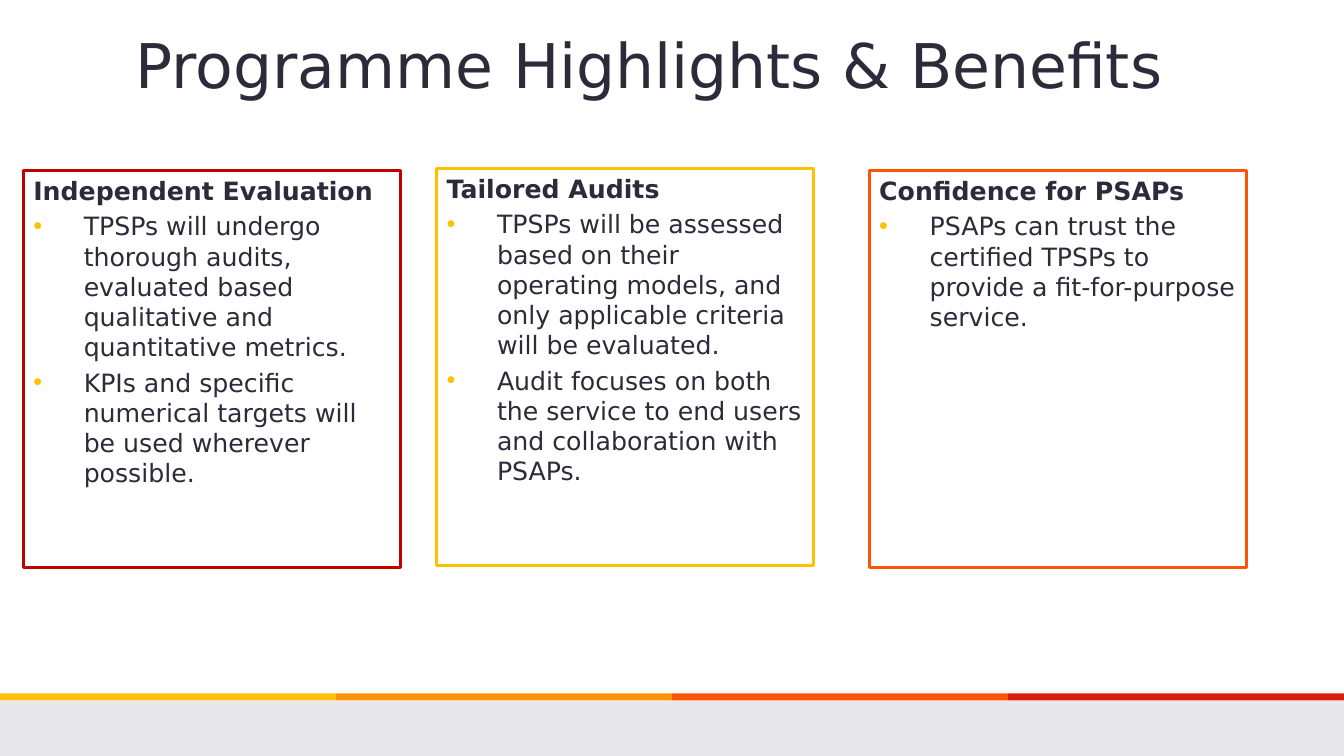
"""Build the programme highlights and benefits slide."""
from dataclasses import dataclass

from lxml import etree
from pptx import Presentation
from pptx.dml.color import RGBColor
from pptx.enum.shapes import MSO_SHAPE
from pptx.enum.text import MSO_ANCHOR, MSO_AUTO_SIZE, PP_ALIGN
from pptx.oxml.ns import qn
from pptx.util import Emu, Inches, Pt

RECTANGLE = MSO_SHAPE.RECTANGLE
TOP = MSO_ANCHOR.TOP
NO_AUTOFIT = MSO_AUTO_SIZE.NONE
LEFT = PP_ALIGN.LEFT
CENTER = PP_ALIGN.CENTER

INK = RGBColor(0x2D, 0x2B, 0x3A)
GREY = RGBColor(0xE8, 0xE8, 0xEA)
GOLD = RGBColor(0xFD, 0xC0, 0x0D)
AMBER = RGBColor(0xFE, 0x93, 0x09)
ORANGE = RGBColor(0xFC, 0x55, 0x07)
RED = RGBColor(0xDC, 0x1B, 0x0C)
CRIMSON = RGBColor(0xC0, 0x00, 0x00)
YELLOW = RGBColor(0xFF, 0xC0, 0x00)

FONT = "DejaVu Sans"
WIDTH, HEIGHT = Inches(13.33), Inches(7.5)
COMPARISON_LAYOUT = 4
HANGING = Inches(0.5)


@dataclass(frozen=True)
class Area:
    """Position and size in percent of the slide."""
    left: float
    top: float
    width: float
    height: float

    def place(self, shape) -> None:
        """Move the shape to this area."""
        shape.left, shape.width = (Emu(int(WIDTH * share / 100)) for share in (self.left, self.width))
        shape.top, shape.height = (Emu(int(HEIGHT * share / 100)) for share in (self.top, self.height))


@dataclass(frozen=True)
class Card:
    """An outlined box with a heading and bullet points."""
    left: float
    top: float
    outline: RGBColor
    heading: str
    points: tuple[str, ...]


TITLE_AREA = Area(0, 2.93, 96.7, 17.33)
FOOTER_AREA = Area(0, 92.67, 100, 7.33)
STRIPE_TOP, STRIPE_HEIGHT = 91.73, 0.93
CARD_WIDTH, CARD_HEIGHT = 28.06, 52.53
STRIPES = (GOLD, AMBER, ORANGE, RED)

CARDS = (
    Card(1.73, 22.53, CRIMSON, "Independent Evaluation", (
        "TPSPs will undergo thorough audits, evaluated based qualitative and quantitative metrics.",
        "KPIs and specific numerical targets will be used wherever possible.",
    )),
    Card(32.48, 22.27, YELLOW, "Tailored Audits", (
        "TPSPs will be assessed based on their operating models, and only applicable criteria will be evaluated.",
        "Audit focuses on both the service to end users and collaboration with PSAPs.",
    )),
    Card(64.67, 22.53, ORANGE, "Confidence for PSAPs", (
        "PSAPs can trust the certified TPSPs to provide a fit-for-purpose service.",
    )),
)


def add_band(page, area: Area, color: RGBColor) -> None:
    """Draw a plain filled rectangle."""
    band = page.shapes.add_shape(RECTANGLE, 0, 0, 0, 0)
    area.place(band)
    band.shadow.inherit = False
    band.fill.solid()
    band.fill.fore_color.rgb = color
    band.line.fill.background()


def prepare_frame(box):
    """Set the wrapping and anchoring of a placeholder and return its text frame."""
    frame = box.text_frame
    frame.word_wrap = True
    frame.auto_size = NO_AUTOFIT
    frame.vertical_anchor = TOP
    return frame


def write_span(para, text: str, size: int, bold: bool = False) -> None:
    """Add one formatted run to a paragraph."""
    span = para.add_run()
    span.text = text
    span.font.name = FONT
    span.font.size = Pt(size)
    span.font.bold = bold
    span.font.color.rgb = INK


def set_bullet(para, bulleted: bool) -> None:
    """Give the paragraph a yellow hanging bullet, or none."""
    props = para._p.get_or_add_pPr()
    props.set("marL", str(HANGING if bulleted else 0))
    props.set("indent", str(-HANGING if bulleted else 0))
    if bulleted:
        tint = etree.SubElement(props, qn("a:buClr"))
        etree.SubElement(tint, qn("a:srgbClr"), val=str(YELLOW))
        etree.SubElement(props, qn("a:buChar"), char="•")
    else:
        etree.SubElement(props, qn("a:buNone"))


def fill_card(box, card: Card) -> None:
    """Turn a body placeholder into an outlined card."""
    Area(card.left, card.top, CARD_WIDTH, CARD_HEIGHT).place(box)
    box.fill.background()
    box.line.color.rgb = card.outline
    box.line.width = Pt(2)
    frame = prepare_frame(box)
    for index, text in enumerate((card.heading, *card.points)):
        para = frame.add_paragraph() if index else frame.paragraphs[0]
        set_bullet(para, index > 0)
        para.alignment = LEFT
        para.space_before = Pt(3.6 if index else 0)
        write_span(para, text, 18, bold=index == 0)


def main() -> None:
    """Build and save the deck."""
    deck = Presentation()
    deck.slide_width, deck.slide_height = WIDTH, HEIGHT
    page = deck.slides.add_slide(deck.slide_layouts[COMPARISON_LAYOUT])

    title = page.shapes.title
    TITLE_AREA.place(title)
    para = prepare_frame(title).paragraphs[0]
    para.alignment = CENTER
    write_span(para, "Programme Highlights & Benefits", 44)

    bodies = list(page.placeholders)[1:]
    for box, card in zip(bodies, CARDS):
        fill_card(box, card)
    for spare in bodies[len(CARDS):]:
        spare.element.getparent().remove(spare.element)

    add_band(page, FOOTER_AREA, GREY)
    stripe_width = 100 / len(STRIPES)
    for index, color in enumerate(STRIPES):
        add_band(page, Area(index * stripe_width, STRIPE_TOP, stripe_width, STRIPE_HEIGHT), color)

    deck.save("out.pptx")


if __name__ == "__main__":
    main()
